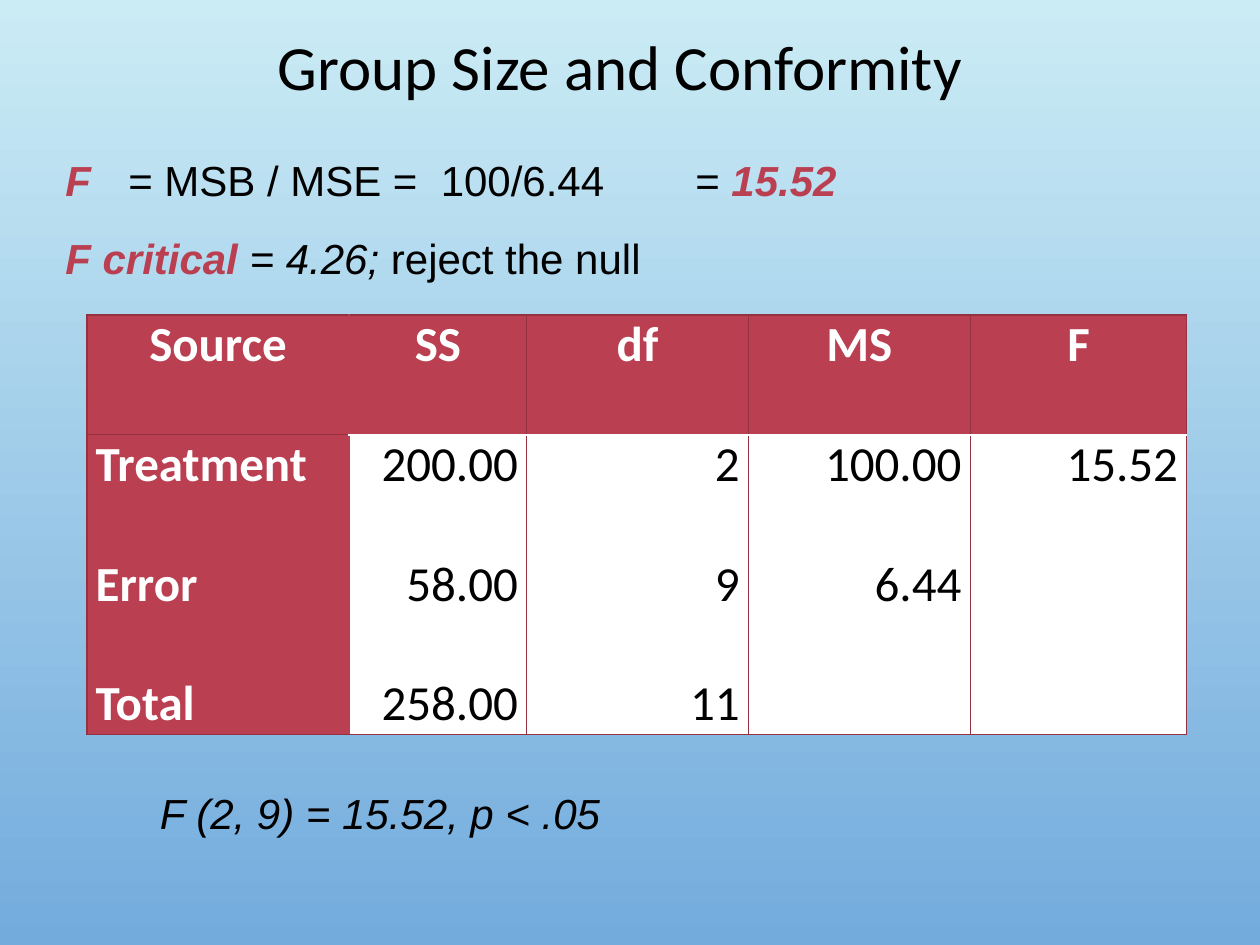
from dataclasses import dataclass

from lxml import etree
from pptx import Presentation
from pptx.dml.color import RGBColor
from pptx.enum.text import MSO_ANCHOR, PP_ALIGN
from pptx.oxml.ns import qn
from pptx.util import Inches, Pt

LEFT, CENTER, RIGHT = PP_ALIGN.LEFT, PP_ALIGN.CENTER, PP_ALIGN.RIGHT
MIDDLE, TOP = MSO_ANCHOR.MIDDLE, MSO_ANCHOR.TOP

SKY_TOP = RGBColor(0xCB, 0xEC, 0xF5)
SKY_BOTTOM = RGBColor(0x73, 0xAB, 0xDD)
CRIMSON = RGBColor(0xBA, 0x3F, 0x51)
MAROON = RGBColor(0x95, 0x32, 0x41)
WHITE = RGBColor(0xFF, 0xFF, 0xFF)
BLACK = RGBColor(0, 0, 0)

SLIDE_WIDTH, SLIDE_HEIGHT = Inches(10), Inches(7.5)
COLUMN_WIDTHS = (2.08, 1.41, 1.76, 1.76, 1.72)
ROW_HEIGHTS = (0.95, 2.38)
BLANK_LINE = Pt(34.2)
THIN, THICK = 0.75, 1.25


@dataclass(frozen=True)
class Span:
    text: str
    color: RGBColor = BLACK
    bold: bool = False
    italic: bool = False
    size: float = 24
    font: str = "Arial"


@dataclass(frozen=True)
class Column:
    heading: str
    values: tuple[str, ...]


ANOVA = (
    Column("Source", ("Treatment", "Error", "Total")),
    Column("SS", ("200.00", "58.00", "258.00")),
    Column("df", ("2", "9", "11")),
    Column("MS", ("100.00", "6.44")),
    Column("F", ("15.52",)),
)

STATISTICS = (
    (
        Span("F", CRIMSON, bold=True, italic=True),
        Span(" \t= MSB / MSE =  100/6.44 \t\t= "),
        Span("15.52", CRIMSON, bold=True, italic=True),
    ),
    (
        Span("F critical ", CRIMSON, bold=True, italic=True),
        Span("= 4.26; ", italic=True),
        Span("reject the null"),
    ),
)


def write_spans(paragraph, spans: tuple[Span, ...]) -> None:
    for span in spans:
        run = paragraph.add_run()
        run.text = span.text
        run.font.name = span.font
        run.font.size = Pt(span.size)
        run.font.bold = span.bold
        run.font.italic = span.italic
        run.font.color.rgb = span.color


def add_text(slide, left: float, top: float, width: float, height: float,
             lines: tuple[tuple[Span, ...], ...], align=LEFT, anchor=TOP,
             wrap: bool = True, line_spacing: float = 1.0, gap: float = 0) -> None:
    box = slide.shapes.add_textbox(Inches(left), Inches(top), Inches(width), Inches(height))
    frame = box.text_frame
    frame.word_wrap = wrap
    frame.vertical_anchor = anchor
    for index, spans in enumerate(lines):
        paragraph = frame.add_paragraph() if index else frame.paragraphs[0]
        paragraph.alignment = align
        paragraph.line_spacing = line_spacing
        paragraph.space_before = Pt(gap if index else 0)
        write_spans(paragraph, spans)


def set_borders(cell, borders: dict[str, tuple[RGBColor, float]]) -> None:
    """Put the lines, given in schema order, before the cell's fill."""
    properties = cell._tc.get_or_add_tcPr()
    for position, (side, (color, points)) in enumerate(borders.items()):
        line = etree.Element(qn(f"a:ln{side}"), w=str(Pt(points)))
        fill = etree.SubElement(line, qn("a:solidFill"))
        etree.SubElement(fill, qn("a:srgbClr"), val=str(color))
        properties.insert(position, line)


def fill_cell(cell, entries: tuple[str, ...], align, fill: RGBColor, emphasis: bool) -> None:
    cell.fill.solid()
    cell.fill.fore_color.rgb = fill
    cell.margin_left = cell.margin_right = Inches(0.07)
    cell.margin_top = cell.margin_bottom = 0
    frame = cell.text_frame
    color = WHITE if emphasis else BLACK
    for index, entry in enumerate(entries):
        paragraph = frame.add_paragraph() if index else frame.paragraphs[0]
        paragraph.alignment = align
        paragraph.space_before = BLANK_LINE if index else 0
        write_spans(paragraph, (Span(entry, color, bold=emphasis, size=28, font="Calibri"),))


def add_anova_table(slide) -> None:
    table = slide.shapes.add_table(
        len(ROW_HEIGHTS), len(ANOVA), Inches(0.69), Inches(2.5),
        Inches(sum(COLUMN_WIDTHS)), Inches(sum(ROW_HEIGHTS))).table
    table.horz_banding = False
    for row, height in zip(table.rows, ROW_HEIGHTS):
        row.height = Inches(height)
    maroon_line = (MAROON, THIN)
    for index, (column, width) in enumerate(zip(ANOVA, COLUMN_WIDTHS)):
        table.columns[index].width = Inches(width)
        is_source = index == 0
        header, body = table.cell(0, index), table.cell(1, index)
        fill_cell(header, (column.heading,), CENTER, CRIMSON, True)
        fill_cell(body, column.values, LEFT if is_source else RIGHT,
                  CRIMSON if is_source else WHITE, is_source)
        divider = maroon_line if is_source else (WHITE, THICK)
        source_edge = (CRIMSON, THICK)
        set_borders(header, {
            "L": source_edge if index == 1 else maroon_line,
            "R": source_edge if is_source else maroon_line,
            "T": maroon_line, "B": divider})
        set_borders(body, {
            "L": source_edge if index == 1 else maroon_line,
            "R": source_edge if is_source else maroon_line,
            "T": divider, "B": maroon_line})


def paint_background(slide) -> None:
    fill = slide.background.fill
    fill.gradient()
    fill.gradient_angle = 270
    for stop, position, color in zip(fill.gradient_stops, (0, 1), (SKY_TOP, SKY_BOTTOM)):
        stop.position = position
        stop.color.rgb = color


def main() -> None:
    presentation = Presentation()
    presentation.slide_width, presentation.slide_height = SLIDE_WIDTH, SLIDE_HEIGHT
    slide = presentation.slides.add_slide(presentation.slide_layouts[6])
    paint_background(slide)
    add_text(slide, 0.42, 1.1, 9, 4.95, STATISTICS, line_spacing=1.2, gap=10)
    add_anova_table(slide)
    add_text(slide, 1.17, 6.2, 3.73, 0.5,
             ((Span("F (2, 9) = 15.52, p < .05", italic=True),),), wrap=False)
    add_text(slide, 0.42, 0.17, 9, 0.7,
             ((Span("Group Size and Conformity", size=36, font="Calibri"),),),
             align=CENTER, anchor=MIDDLE)
    presentation.save("out.pptx")


if __name__ == "__main__":
    main()
